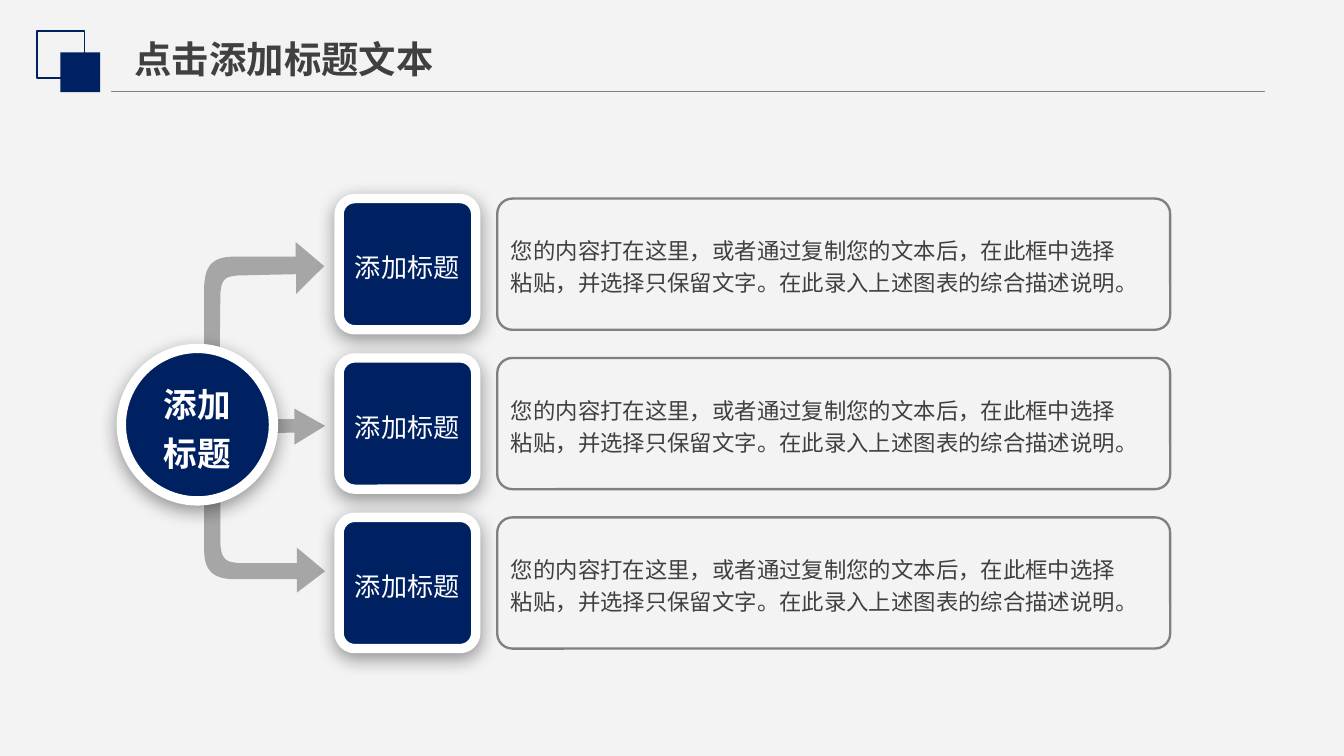
from dataclasses import dataclass
from typing import Optional

from lxml.etree import SubElement
from pptx import Presentation
from pptx.dml.color import RGBColor
from pptx.enum.shapes import MSO_CONNECTOR, MSO_SHAPE
from pptx.enum.text import MSO_ANCHOR, PP_ALIGN
from pptx.oxml.ns import qn
from pptx.util import Pt

NAVY = RGBColor(0x00, 0x21, 0x61)
WHITE = RGBColor(0xFF, 0xFF, 0xFF)
GRAY = RGBColor(0x80, 0x80, 0x80)
ARROW_GRAY = RGBColor(0xA6, 0xA6, 0xA6)
INK = RGBColor(0x40, 0x40, 0x40)
BACKGROUND = RGBColor(0xF3, 0xF3, 0xF3)
FONT = "Noto Sans CJK SC"

FIRST_ROW_TOP, ROW_PITCH, ROW_HEIGHT = 106.4, 85.4, 70.3
CURVE_STEPS = 12

Point = tuple[float, float]


@dataclass(frozen=True)
class Box:
    left: float
    top: float
    width: float
    height: float


@dataclass(frozen=True)
class Item:
    title: str
    lines: tuple[str, ...]


@dataclass(frozen=True)
class Outline:
    """Each segment holds one point for a line or three for a Bézier curve."""
    start: Point
    segments: tuple[tuple[Point, ...], ...]


ITEMS = [Item("添加标题", ("您的内容打在这里，或者通过复制您的文本后，在此框中选择",
                       "粘贴，并选择只保留文字。在此录入上述图表的综合描述说明。"))] * 3

LOWER_ARROW = Outline((118.1, 238.3), (
    ((118.1, 291.6),),
    ((118.8, 301), (122.4, 301), (128.2, 301.7)),
    ((159.1, 301.7),), ((159.1, 293.4),), ((174.2, 306),),
    ((159.1, 317.5),), ((159.1, 310.3),), ((126, 310.3),),
    ((113.8, 310.3), (109.4, 305.3), (109.4, 294.5)),
    ((109.4, 236.9),),
    ((110.9, 227.5), (115.9, 228.2), (118.1, 238.3)),
))
MIDDLE_ARROW = Outline((97.9, 233.3), (
    ((157.7, 231.8),), ((157.7, 238.3),), ((174.2, 228.2),),
    ((157.7, 218.9),), ((157.7, 224.6),), ((97.9, 224.6),),
))
UPPER_ARROW = Outline((117.4, 221), (
    ((118.1, 159.1),),
    ((118.1, 148.3), (121.7, 148.3), (127.4, 147.6)),
    ((158.7, 146.9),), ((158.7, 157.5),), ((173.7, 142.6),),
    ((158.4, 129.6),), ((158.4, 137.5),), ((125.3, 137.5),),
    ((113, 137.5), (109.4, 143.3), (109.4, 155.5)),
    ((109.4, 222.5),),
    ((110.9, 233.3), (116, 232.6), (117.4, 221)),
))


def write_text(frame, lines: tuple[str, ...], *, size: float, color: RGBColor,
               bold: bool = False, align: PP_ALIGN = PP_ALIGN.LEFT,
               spacing: Optional[float] = None) -> None:
    for index, line in enumerate(lines):
        paragraph = frame.paragraphs[0] if index == 0 else frame.add_paragraph()
        paragraph.alignment = align
        if spacing:
            paragraph.line_spacing = spacing
        run = paragraph.add_run()
        run.text = line
        run.font.size = Pt(size)
        run.font.bold = bold
        run.font.color.rgb = color
        run.font.name = FONT
        SubElement(run.font._element, qn("a:ea"), typeface=FONT)


def add_box(slide, kind: MSO_SHAPE, box: Box, *, fill: Optional[RGBColor] = None,
            line: Optional[RGBColor] = None, line_width: float = 1,
            radius: Optional[float] = None):
    shape = slide.shapes.add_shape(kind, Pt(box.left), Pt(box.top),
                                   Pt(box.width), Pt(box.height))
    shape.shadow.inherit = False
    if radius is not None:
        shape.adjustments[0] = radius
    if fill is None:
        shape.fill.background()
    else:
        shape.fill.solid()
        shape.fill.fore_color.rgb = fill
    if line is None:
        shape.line.fill.background()
    else:
        shape.line.color.rgb = line
        shape.line.width = Pt(line_width)
    frame = shape.text_frame
    frame.word_wrap = True
    frame.vertical_anchor = MSO_ANCHOR.MIDDLE
    frame.margin_left = frame.margin_right = Pt(5)
    frame.margin_top = frame.margin_bottom = Pt(2.5)
    return shape


def add_soft_shadow(shape) -> None:
    effects = shape._element.spPr.find(qn("a:effectLst"))
    shadow = SubElement(effects, qn("a:outerShdw"), blurRad=str(Pt(10)),
                        dist=str(Pt(3)), dir="5400000", algn="t", rotWithShape="0")
    color = SubElement(shadow, qn("a:srgbClr"), val="000000")
    SubElement(color, qn("a:alpha"), val="40000")


def add_badge(slide, kind: MSO_SHAPE, box: Box, label: str, *, size: float,
              bold: bool = False, radius: Optional[float] = None) -> None:
    badge = add_box(slide, kind, box, fill=NAVY, line=WHITE, line_width=5, radius=radius)
    add_soft_shadow(badge)
    write_text(badge.text_frame, (label,), size=size, color=WHITE, bold=bold,
               align=PP_ALIGN.CENTER, spacing=1.2)


def bezier(p0: Point, p1: Point, p2: Point, p3: Point) -> list[Point]:
    points = []
    for step in range(1, CURVE_STEPS + 1):
        t = step / CURVE_STEPS
        u = 1 - t
        points.append(tuple(u**3 * a + 3 * u * u * t * b + 3 * u * t * t * c + t**3 * d
                            for a, b, c, d in zip(p0, p1, p2, p3)))
    return points


def add_arrow(slide, outline: Outline) -> None:
    points = [outline.start]
    for segment in outline.segments:
        points += bezier(points[-1], *segment) if len(segment) == 3 else segment
    start, *rest = [(Pt(x), Pt(y)) for x, y in points]
    builder = slide.shapes.build_freeform(*start)
    builder.add_line_segments(rest, close=True)
    arrow = builder.convert_to_shape()
    arrow.shadow.inherit = False
    arrow.fill.solid()
    arrow.fill.fore_color.rgb = ARROW_GRAY
    arrow.line.fill.background()


def add_header(slide) -> None:
    rule = slide.shapes.add_connector(MSO_CONNECTOR.STRAIGHT, Pt(59.6), Pt(49.2),
                                      Pt(677.6), Pt(49.2))
    rule.line.color.rgb = GRAY
    rule.line.width = Pt(0.75)
    SubElement(rule._element.spPr, qn("a:effectLst"))
    add_box(slide, MSO_SHAPE.RECTANGLE, Box(19.9, 16.4, 25.4, 25.4), line=NAVY)
    add_box(slide, MSO_SHAPE.RECTANGLE, Box(32.4, 28.1, 21.3, 21.3), fill=NAVY)
    heading = slide.shapes.add_textbox(Pt(65), Pt(16), Pt(176.4), Pt(31.7))
    heading.text_frame.word_wrap = False
    write_text(heading.text_frame, ("点击添加标题文本",), size=20, color=INK, bold=True)


def add_row(slide, item: Item, top: float) -> None:
    description = add_box(slide, MSO_SHAPE.ROUNDED_RECTANGLE,
                          Box(266.4, top, 360.5, ROW_HEIGHT),
                          line=GRAY, line_width=1.25, radius=0.115)
    write_text(description.text_frame, item.lines, size=12, color=INK, spacing=1.2)
    add_badge(slide, MSO_SHAPE.ROUNDED_RECTANGLE, Box(181.7, top, 73.2, ROW_HEIGHT),
              item.title, size=14, radius=0.119)


def main() -> None:
    deck = Presentation()
    deck.slide_width, deck.slide_height = Pt(720), Pt(405)
    slide = deck.slides.add_slide(deck.slide_layouts[6])
    slide.background.fill.solid()
    slide.background.fill.fore_color.rgb = BACKGROUND

    add_header(slide)
    for outline in (LOWER_ARROW, MIDDLE_ARROW, UPPER_ARROW):
        add_arrow(slide, outline)
    for index, item in enumerate(ITEMS):
        add_row(slide, item, FIRST_ROW_TOP + index * ROW_PITCH)
    add_badge(slide, MSO_SHAPE.OVAL, Box(65, 186.7, 81.5, 81.7), "添加标题",
              size=18, bold=True)
    deck.save("out.pptx")


if __name__ == "__main__":
    main()
